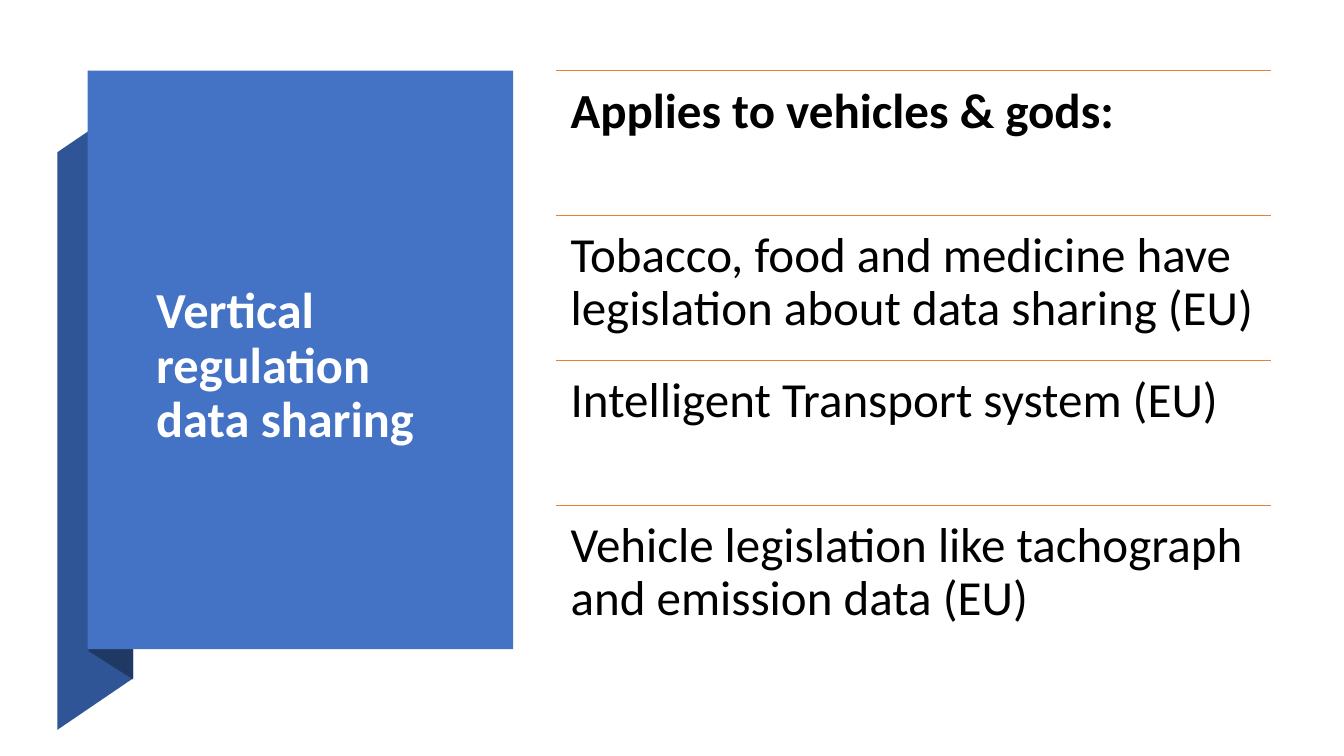
from lxml import etree
from pptx import Presentation
from pptx.dml.color import RGBColor
from pptx.enum.shapes import MSO_CONNECTOR, MSO_SHAPE
from pptx.enum.text import MSO_ANCHOR
from pptx.oxml.ns import qn
from pptx.util import Inches, Pt

LINE, RECT = MSO_CONNECTOR.STRAIGHT, MSO_SHAPE.RECTANGLE
TOP, MIDDLE = MSO_ANCHOR.TOP, MSO_ANCHOR.MIDDLE

# Content
TITLE = "Vertical regulation data sharing"
ITEMS = [
    ("Applies to vehicles & gods:", True),
    ("Tobacco, food and medicine have legislation about data sharing (EU)", False),
    ("Intelligent Transport system (EU)", False),
    ("Vehicle legislation like tachograph and emission data (EU)", False),
]
FOLDS = [
    ("2F5597", [(0.57, 7.24), (1.32, 6.73), (1.32, 1), (0.57, 1.51)]),
    ("203864", [(0.88, 6.46), (1.32, 6.74), (1.32, 0.99), (0.88, 0.7)]),
]
PANEL = (0.87, 0.7, 4.22, 5.74)

# Row layout
LEFT, START, WIDTH = 5.51, 0.7, 7.1
ROW = 5.75 / len(ITEMS)

prs = Presentation()
prs.slide_width, prs.slide_height = Inches(13.33), Inches(7.5)
slide = prs.slides.add_slide(prs.slide_layouts[6])
shapes = slide.shapes


def color(code):
    return RGBColor.from_string(code)


def paint(shape, code):
    shape.shadow.inherit = False
    shape.fill.solid()
    shape.fill.fore_color.rgb = color(code)
    shape.line.fill.background()


def add_text(box, text, size, code, bold, anchor, pad):
    frame = shapes.add_textbox(*map(Inches, box)).text_frame
    frame.word_wrap = True
    frame.vertical_anchor = anchor
    frame.margin_left = frame.margin_right = Inches(pad)
    frame.margin_top = frame.margin_bottom = Inches(pad)
    para = frame.paragraphs[0]
    para.text = text
    para.line_spacing = 0.9
    font = para.font
    font.name, font.size, font.bold = "Calibri", Pt(size), bold
    font.color.rgb = color(code)


def add_rule(y):
    rule = shapes.add_connector(
        LINE, Inches(LEFT), Inches(y), Inches(LEFT + WIDTH), Inches(y))
    rule.line.color.rgb = color("ED7D31")
    rule.line.width = Pt(1)
    etree.SubElement(rule.element.spPr, qn("a:effectLst"))


# Folded ribbon behind the panel
for code, points in FOLDS:
    spots = [(Inches(x), Inches(y)) for x, y in points]
    pen = shapes.build_freeform(*spots[0])
    pen.add_line_segments(spots[1:], close=True)
    paint(pen.convert_to_shape(), code)

# Title panel
paint(shapes.add_shape(RECT, *map(Inches, PANEL)), "4472C4")
add_text((1.45, 1.67, 3.01, 3.94), TITLE, 36, "FFFFFF", True, MIDDLE, 0.1)

# Ruled rows
for i, (text, bold) in enumerate(ITEMS):
    y = START + i * ROW
    add_rule(y)
    add_text((LEFT, y, WIDTH, ROW), text, 35, "000000", bold, TOP, 0.15)

prs.save("out.pptx")
